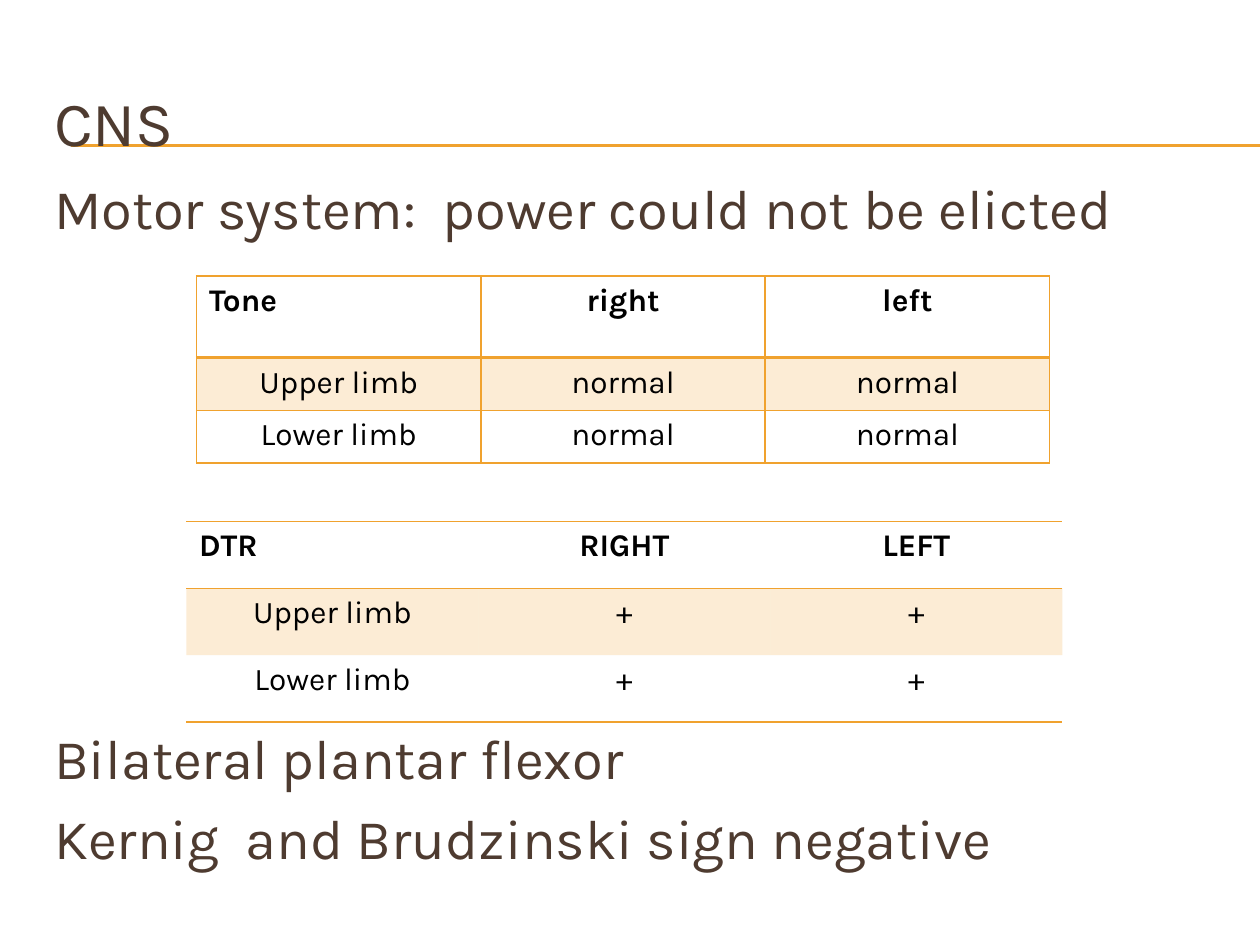
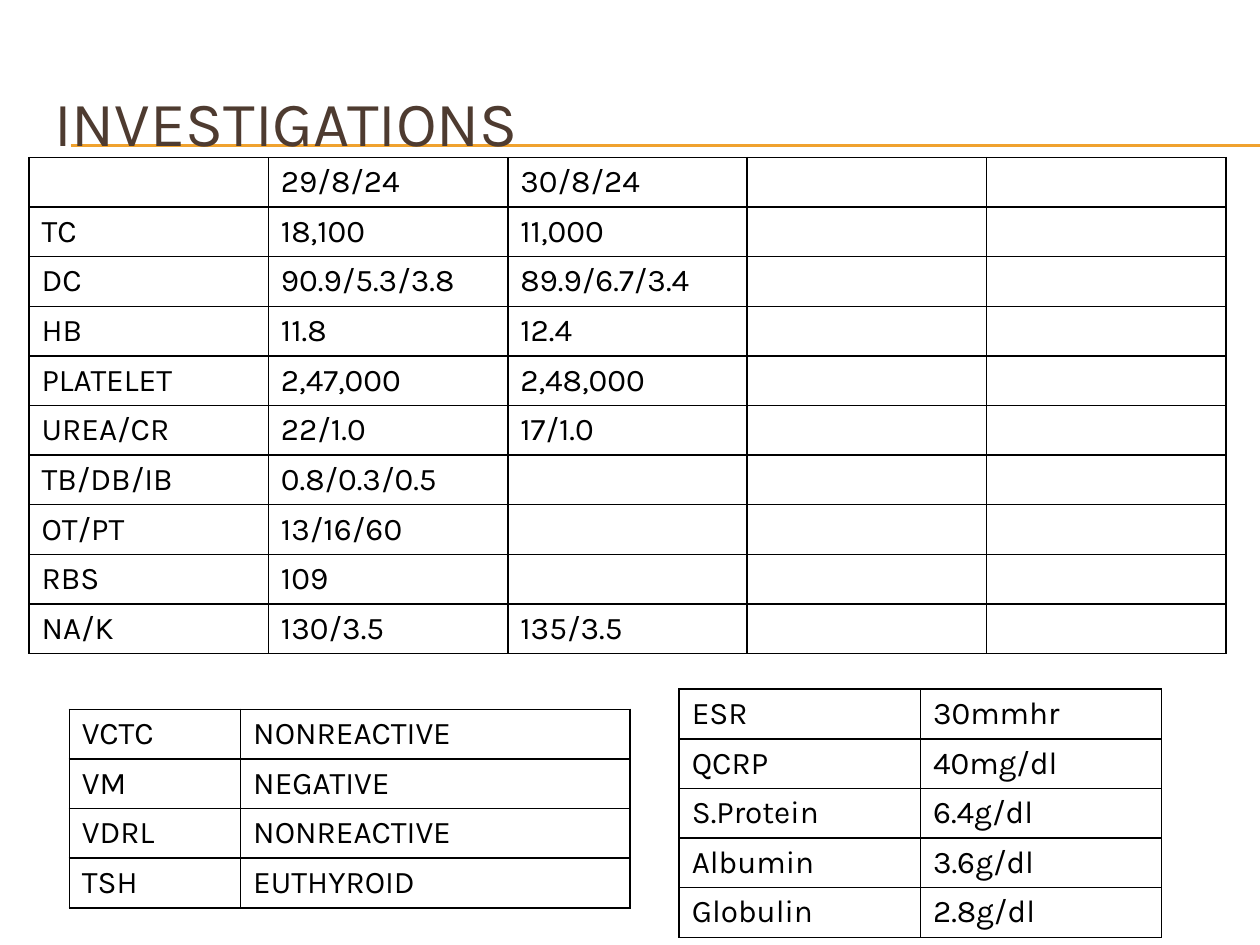
from lxml import etree
from pptx import Presentation
from pptx.dml.color import RGBColor
from pptx.enum.shapes import MSO_CONNECTOR
from pptx.enum.text import MSO_ANCHOR, MSO_AUTO_SIZE, PP_ALIGN
from pptx.oxml.ns import qn
from pptx.util import Inches, Pt

LEFT, CENTER = PP_ALIGN.LEFT, PP_ALIGN.CENTER
MIDDLE, TOP = MSO_ANCHOR.MIDDLE, MSO_ANCHOR.TOP
NO_FIT = MSO_AUTO_SIZE.NONE
STRAIGHT = MSO_CONNECTOR.STRAIGHT

BROWN = RGBColor(0x4E, 0x3B, 0x30)
ORANGE = RGBColor(0xF0, 0xA2, 0x2E)
BLACK = RGBColor(0, 0, 0)
FONT = "Karla"
PLAIN_TABLE_STYLE = "{2D5ABB26-0587-4C30-8999-92F81FD0307C}"

# The slide is a grid of 100 columns by 75 rows of square units
SLIDE_WIDTH, SLIDE_HEIGHT = Inches(10), Inches(7.5)
TITLE_LAYOUT, BODY_LAYOUT = 5, 1

TONE = [("Tone", "right", "left"),
        ("Upper limb", "normal", "normal"),
        ("Lower limb", "normal", "normal")]
REFLEXES = [("DTR", "RIGHT", "LEFT"),
            ("Upper limb", "+", "+"),
            ("Lower limb", "+", "+")]
BLOOD_TESTS = [("", "29/8/24", "30/8/24"),
               ("TC", "18,100", "11,000"),
               ("DC", "90.9/5.3/3.8", "89.9/6.7/3.4"),
               ("HB", "11.8", "12.4"),
               ("PLATELET", "2,47,000", "2,48,000"),
               ("UREA/CR", "22/1.0", "17/1.0"),
               ("TB/DB/IB", "0.8/0.3/0.5"),
               ("OT/PT", "13/16/60"),
               ("RBS", "109"),
               ("NA/K", "130/3.5", "135/3.5")]
SEROLOGY = [("VCTC", "NONREACTIVE"), ("VM", "NEGATIVE"),
            ("VDRL", "NONREACTIVE"), ("TSH", "EUTHYROID")]
PROTEINS = [("ESR", "30mmhr"), ("QCRP", "40mg/dl"), ("S.Protein", "6.4g/dl"),
            ("Albumin", "3.6g/dl"), ("Globulin", "2.8g/dl")]


def grid(units):
    return round(SLIDE_WIDTH * units / 100)


def write(para, text, size=18, color=BLACK, bold=False, align=LEFT):
    """Put formatted text in a paragraph; an empty one keeps its line height."""
    para.alignment = align
    if not text:
        end = etree.SubElement(para._p, qn("a:endParaRPr"), sz=str(size * 100))
        etree.SubElement(end, qn("a:latin"), typeface=FONT)
        return
    span = para.add_run()
    span.text = text
    span.font.name = FONT
    span.font.size = Pt(size)
    span.font.bold = bold
    span.font.color.rgb = color


def place(box, left, top, width, height, anchor):
    box.left, box.top = grid(left), grid(top)
    box.width, box.height = grid(width), grid(height)
    frame = box.text_frame
    frame.word_wrap = True
    frame.auto_size = NO_FIT
    frame.vertical_anchor = anchor
    return frame


def add_page(deck, layout, title):
    page = deck.slides.add_slide(deck.slide_layouts[layout])
    frame = place(page.shapes.title, 3.3, 5, 95, 9.2, MIDDLE)
    write(frame.paragraphs[0], title, size=36, color=BROWN)
    return page


def add_title_rules(deck, page):
    """Draw the double rule, then hand it to the master behind every title."""
    for row in (11.5, 11.6):
        rule = page.shapes.add_connector(
            STRAIGHT, grid(5.6), grid(row), SLIDE_WIDTH, grid(row))
        rule.line.color.rgb = ORANGE
        rule.line.width = Pt(0.75)
        etree.SubElement(rule.element.spPr, qn("a:effectLst"))
        deck.slide_master.shapes.element.append(rule.element)


def add_findings(page, findings):
    """List of (text, space before in points)."""
    frame = place(page.placeholders[1], 3.3, 13.3, 95, 61.7, TOP)
    for number, (text, space) in enumerate(findings):
        para = frame.add_paragraph() if number else frame.paragraphs[0]
        para.space_before = Pt(space)
        properties = para._p.get_or_add_pPr()
        properties.set("marL", str(grid(3.8)))
        properties.set("indent", str(-grid(3.8)))
        etree.SubElement(properties, qn("a:buNone"))
        write(para, text, size=32, color=BROWN)


def set_borders(cell, color, widths):
    """Widths in points by side (L, R, T, B); a side left out has no line."""
    properties = cell._tc.get_or_add_tcPr()
    for side in "LRTB":
        width = widths.get(side, 0)
        line = etree.SubElement(properties, qn(f"a:ln{side}"), w=str(Pt(width)))
        if width:
            fill = etree.SubElement(line, qn("a:solidFill"))
            etree.SubElement(fill, qn("a:srgbClr"), val=str(color))
        else:
            etree.SubElement(line, qn("a:noFill"))


def tint(cell, color, percent):
    cell.fill.solid()
    cell.fill.fore_color.rgb = color
    shade = cell._tc.tcPr.find(f"{qn('a:solidFill')}/{qn('a:srgbClr')}")
    etree.SubElement(shade, qn("a:alpha"), val=str(percent * 1000))


def boxed(row):
    return dict.fromkeys("LRTB", 1)


def boxed_with_header(row):
    sides = boxed(row)
    if row < 2:
        sides["B" if row == 0 else "T"] = 2
    return sides


def ruled(row):
    return ({"T": 1, "B": 1}, {"T": 1}, {"B": 1})[row]


def add_grid_table(page, data, left, top, columns, rows,
                   borders=boxed, color=BLACK, clinical=False):
    frame = page.shapes.add_table(len(rows), len(columns), grid(left), grid(top),
                                  grid(sum(columns)), grid(sum(rows)))
    table = frame.table
    table._tbl.tblPr.find(qn("a:tableStyleId")).text = PLAIN_TABLE_STYLE
    table.first_row = table.horz_banding = False
    for column, width in zip(table.columns, columns):
        column.width = grid(width)
    for row, height in enumerate(rows):
        table.rows[row].height = grid(height)
        for column in range(len(columns)):
            cell = table.cell(row, column)
            text = data[row][column] if column < len(data[row]) else ""
            centred = clinical and (row or column)
            write(cell.text_frame.paragraphs[0], text,
                  bold=clinical and row == 0, align=CENTER if centred else LEFT)
            set_borders(cell, color, borders(row))
            if clinical and row == 1:
                tint(cell, ORANGE, 20)
            else:
                cell.fill.background()


def main():
    deck = Presentation()
    deck.slide_width, deck.slide_height = SLIDE_WIDTH, SLIDE_HEIGHT

    # Nervous system findings
    page = add_page(deck, BODY_LAYOUT, "CNS")
    add_title_rules(deck, page)
    add_findings(page, [("Motor system:  power could not be elicted", 7.4),
                        ("Bilateral plantar flexor", 275.7),
                        ("Kernig  and Brudzinski sign negative", 7.4)])
    add_grid_table(page, TONE, 15.6, 21.9, [22.57] * 3, [6.5, 4.17, 4.17],
                   borders=boxed_with_header, color=ORANGE, clinical=True)
    add_grid_table(page, REFLEXES, 14.8, 41.4, [23.17] * 3, [5.3] * 3,
                   borders=ruled, color=ORANGE, clinical=True)

    # Laboratory results
    page = add_page(deck, TITLE_LAYOUT, "INVESTIGATIONS")
    for data, left, top, columns in (
            (BLOOD_TESTS, 2.3, 12.5, [19] * 5),
            (SEROLOGY, 5.5, 56.3, [13.6, 30.9]),
            (PROTEINS, 53.9, 54.7, [19.15] * 2)):
        add_grid_table(page, data, left, top, columns, [3.94] * len(data))

    deck.save("out.pptx")


if __name__ == "__main__":
    main()
